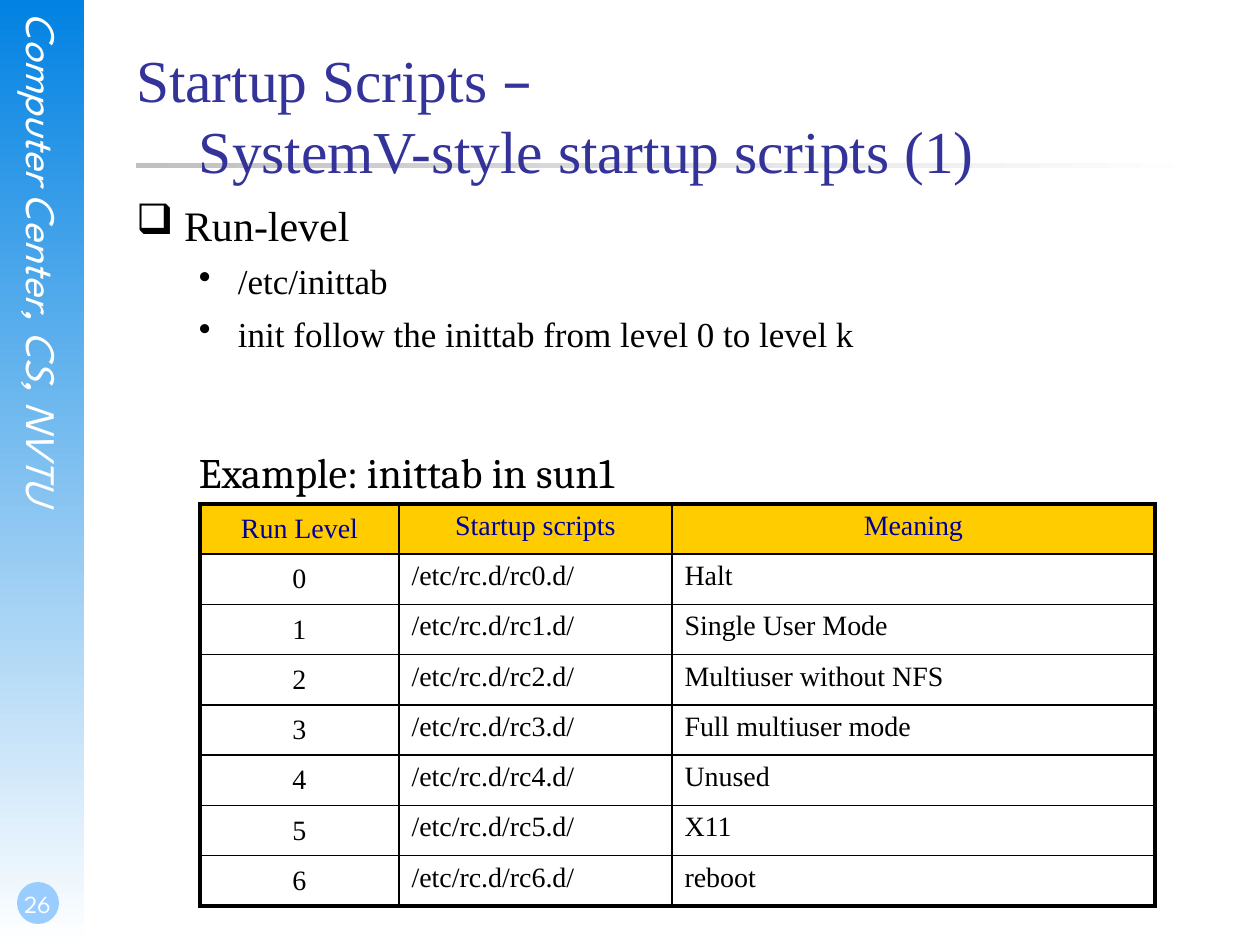
from lxml.etree import SubElement
from pptx import Presentation
from pptx.dml.color import RGBColor
from pptx.enum.shapes import MSO_SHAPE as Shape
from pptx.enum.text import MSO_ANCHOR as Anchor, PP_ALIGN as Align
from pptx.oxml.ns import qn
from pptx.util import Pt

PX = 7258
SERIF, DISPLAY = "Times New Roman", "League Spartan"
COLORS = {
    "sky": "0282E2", "white": "FFFFFF", "badge": "99CCFF", "rule": "C0C0C0",
    "title": "333399", "text": "000000", "header": "FFCC00", "header_text": "000099",
}
SIDEBAR_TEXT = "Computer Center, CS, NVTU"
PAGE_NUMBER = "26"
TITLE = [
    ("Startup Scripts ", SERIF),
    ("–\v", "DejaVu Sans"),
    ("\tSystemV-style startup scripts (1)", SERIF),
]
BULLETS = [
    (0, "Run-level"),
    (1, "/etc/inittab"),
    (1, "init follow the inittab from level 0 to level k"),
]
BULLET_STYLES = [
    {"size": 24, "left": 48, "hang": 48, "mark": "❑"},
    {"size": 20, "left": 102, "hang": 39, "mark": "•"},
]
EXAMPLE = "Example: inittab in sun1"
HEADERS = ["Run Level", "Startup scripts", "Meaning"]
MEANINGS = [
    "Halt", "Single User Mode", "Multiuser without NFS",
    "Full multiuser mode", "Unused", "X11", "reboot",
]
ROWS = [HEADERS] + [
    [str(level), f"/etc/rc.d/rc{level}.d/", meaning]
    for level, meaning in enumerate(MEANINGS)
]
COLUMN_WIDTHS = [199, 273, 483]
TABLE_LEFT, TABLE_TOP, TABLE_HEIGHT = 200, 504, 402


def px(*values):
    return [value * PX for value in values]


def color(name):
    return RGBColor.from_string(COLORS[name])


def set_font(font, size, name, shade):
    font.size, font.name = Pt(size), name
    font.color.rgb = color(shade)


def add_panel(page, kind, place, shades, angle=0):
    panel = page.shapes.add_shape(kind, *px(*place))
    panel.shadow.inherit = False
    panel.line.fill.background()
    if len(shades) == 1:
        panel.fill.solid()
        panel.fill.fore_color.rgb = color(shades[0])
    else:
        panel.fill.gradient()
        panel.fill.gradient_angle = angle
        for stop, shade in zip(panel.fill.gradient_stops, shades):
            stop.color.rgb = color(shade)


def add_box(page, place, margins=(0, 0, 0, 0), anchor=Anchor.TOP, wrap=True):
    frame = page.shapes.add_textbox(*px(*place)).text_frame
    frame.word_wrap, frame.vertical_anchor = wrap, anchor
    (frame.margin_left, frame.margin_top,
     frame.margin_right, frame.margin_bottom) = px(*margins)
    return frame


def add_sidebar(page):
    add_panel(page, Shape.RECTANGLE, (0, 0, 84, 945), ["sky", "white"], 270)
    frame = add_box(page, (19, 13, 50, 644))
    frame._txBody.bodyPr.set("vert", "eaVert")
    para = frame.paragraphs[0]
    para.text = SIDEBAR_TEXT
    set_font(para.font, 24, DISPLAY, "white")
    para.font.italic = True

    add_panel(page, Shape.OVAL, (17, 882, 42, 42), ["badge"])
    para = add_box(page, (0, 861, 73, 63), (2, 0, 0, 6), Anchor.BOTTOM).paragraphs[0]
    para.text, para.alignment = PAGE_NUMBER, Align.CENTER
    set_font(para.font, 14, DISPLAY, "white")


def add_title(page):
    add_panel(page, Shape.RECTANGLE, (136, 163, 1071, 5), ["rule", "white"])
    para = add_box(page, (136, 35, 1071, 158), anchor=Anchor.MIDDLE).paragraphs[0]
    for text, name in TITLE:
        before = len(para.runs)
        line, *rest = text.split("\v")
        span = para.add_run()
        span.text = line
        if rest:
            para.add_line_break()
        set_font(para.runs[before].font, 34, name, "title")
    para.font.size = Pt(34)


def add_bullets(page):
    frame = add_box(page, (136, 199, 1071, 240))
    for index, (level, text) in enumerate(BULLETS):
        para = frame.add_paragraph() if index else frame.paragraphs[0]
        style = BULLET_STYLES[level]
        para.text, para.level = text, level
        para.space_before = Pt(6)
        set_font(para.font, style["size"], SERIF, "text")
        props = para._p.get_or_add_pPr()
        props.set("marL", str(style["left"] * PX))
        props.set("indent", str(-style["hang"] * PX))
        mark = props.makeelement(qn("a:buChar"), {"char": style["mark"]})
        props.find(qn("a:spcBef")).addnext(mark)


def add_border(cell, side, width):
    line = SubElement(cell._tc.get_or_add_tcPr(), qn(f"a:ln{side}"), w=str(Pt(width)))
    fill = SubElement(line, qn("a:solidFill"))
    SubElement(fill, qn("a:srgbClr"), val=COLORS["text"])


def add_run_levels(page):
    para = add_box(page, (186, 441, 441, 64), (13, 6, 13, 6), wrap=False).paragraphs[0]
    para.text = EXAMPLE
    set_font(para.font, 24, "Cambria", "text")

    table = page.shapes.add_table(
        len(ROWS), len(HEADERS),
        *px(TABLE_LEFT, TABLE_TOP, sum(COLUMN_WIDTHS), TABLE_HEIGHT)).table
    table.first_row = table.horz_banding = False
    for column, width in zip(table.columns, COLUMN_WIDTHS):
        column.width = width * PX
    last_row, last_column = len(ROWS) - 1, len(HEADERS) - 1
    for r, row in enumerate(ROWS):
        for c, text in enumerate(row):
            cell = table.cell(r, c)
            edges = {"L": c == 0, "R": c == last_column, "T": r == 0, "B": r == last_row}
            for side, outer in edges.items():
                add_border(cell, side, 2.25 if outer else 1)
            cell.fill.solid()
            cell.fill.fore_color.rgb = color("white" if r else "header")
            cell.vertical_anchor = Anchor.TOP if c else Anchor.MIDDLE
            para = cell.text_frame.paragraphs[0]
            para.text, para.space_before = text, Pt(4)
            para.alignment = Align.LEFT if r and c else Align.CENTER
            set_font(para.font, 16, SERIF, "text" if r else "header_text")


def main():
    deck = Presentation()
    deck.slide_width, deck.slide_height = px(1260, 945)
    page = deck.slides.add_slide(deck.slide_layouts[6])
    add_sidebar(page)
    add_title(page)
    add_bullets(page)
    add_run_levels(page)
    deck.save("out.pptx")


if __name__ == "__main__":
    main()
